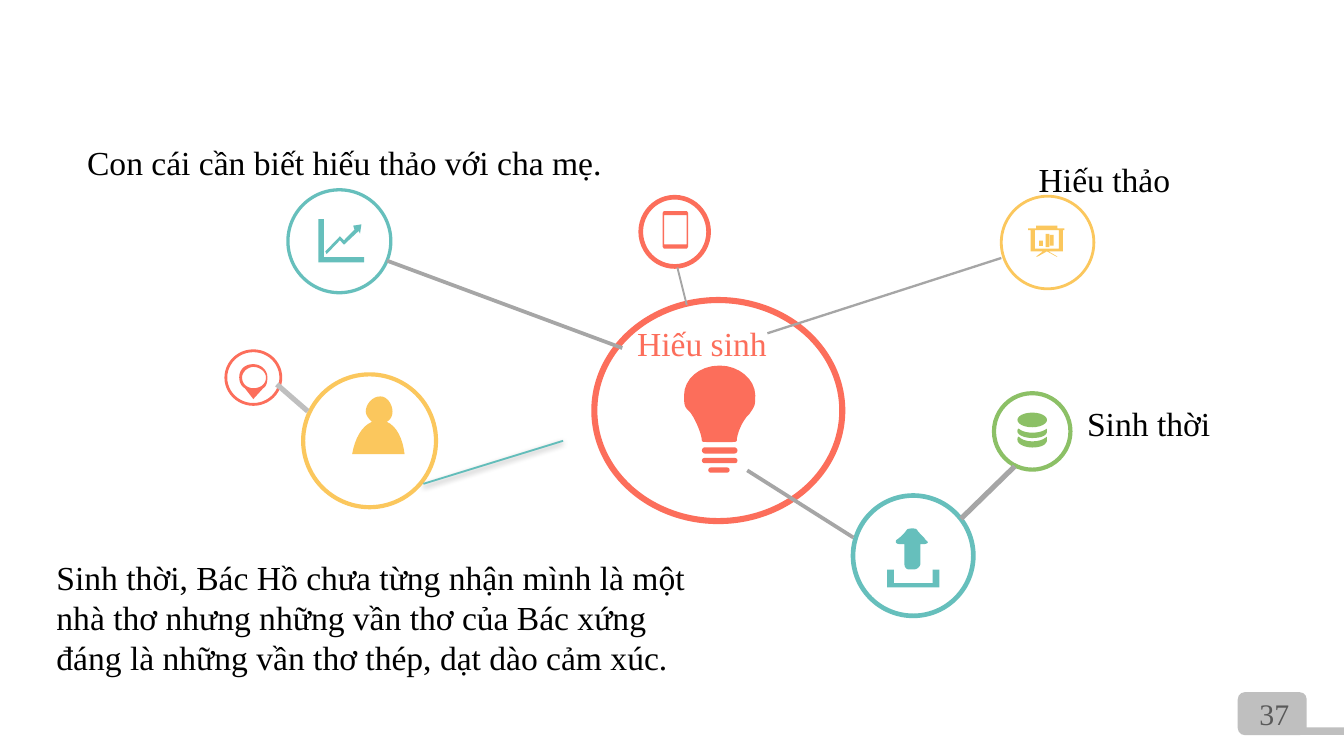
from lxml.etree import SubElement
from pptx import Presentation
from pptx.dml.color import RGBColor
from pptx.enum.shapes import MSO_CONNECTOR, MSO_SHAPE
from pptx.enum.text import MSO_ANCHOR, MSO_AUTO_SIZE, PP_ALIGN
from pptx.oxml.ns import qn
from pptx.util import Inches, Pt

SLIDE_WIDTH = Inches(10)
SLIDE_HEIGHT = SLIDE_WIDTH * 9 // 16
GRID = SLIDE_WIDTH // 100
COLORS = {
    "coral": "FC6E5B", "teal": "66BFBC", "amber": "FBC75D", "green": "8CC066",
    "spoke": "A6A6A6", "badge": "BFBFBF", "number": "595959", "text": "000000",
    "accent": "62BDBA",
}


def rgb(color):
    """Look up a named colour."""
    return RGBColor.from_string(COLORS[color])


def emu(box):
    """Turn grid columns and rows into slide lengths."""
    return [round(value * GRID) for value in box]


def share(box, part):
    """Return the box that takes the given percentages of another box."""
    left, top, width, height = box
    x, y, w, h = part
    return (left + width * x / 100, top + height * y / 100, width * w / 100, height * h / 100)


def add_block(slide, kind, box, color):
    """Add a plain filled preset shape."""
    block = slide.shapes.add_shape(kind, *emu(box))
    block.shadow.inherit = False
    block.fill.solid()
    block.fill.fore_color.rgb = rgb(color)
    block.line.fill.background()
    return block


def add_ring(slide, box, color, weight):
    """Add a hollow ellipse whose outer edge fills the box."""
    left, top, width, height = box
    inset = weight / 7.2
    edge = (left + inset / 2, top + inset / 2, width - inset, height - inset)
    ring = add_block(slide, MSO_SHAPE.OVAL, edge, color)
    ring.fill.background()
    ring.line.color.rgb = rgb(color)
    ring.line.width = Pt(weight)


def flatten(contour):
    """Expand points and cubic curves into a list of points."""
    points = [contour[0]]
    for segment in contour[1:]:
        if len(segment) == 2:
            points.append(segment)
            continue
        controls = list(zip([points[-1][0], *segment[::2]], [points[-1][1], *segment[1::2]]))
        for t in (step / 8 for step in range(1, 9)):
            weights = ((1 - t) ** 3, 3 * t * (1 - t) ** 2, 3 * t * t * (1 - t), t ** 3)
            points.append(tuple(sum(w * c[axis] for w, c in zip(weights, controls)) for axis in (0, 1)))
    return points


def add_outline(slide, box, color, *contours):
    """Fill contours given in percentages of the box; an inner one is a hole."""
    builder = None
    for contour in contours:
        points = [emu(share(box, (x, y, 0, 0))[:2]) for x, y in flatten(contour)]
        if builder is None:
            builder = slide.shapes.build_freeform(*points[0], scale=1.0)
        else:
            builder.move_to(*points[0])
        builder.add_line_segments(points[1:], close=True)
    outline = builder.convert_to_shape()
    outline.shadow.inherit = False
    outline.fill.solid()
    outline.fill.fore_color.rgb = rgb(color)
    outline.line.fill.background()


def add_spoke(slide, start, end, weight, color="spoke", shaded=False):
    """Join two grid points with a straight line."""
    spoke = slide.shapes.add_connector(MSO_CONNECTOR.STRAIGHT, *emu((*start, *end)))
    spoke.line.color.rgb = rgb(color)
    spoke.line.width = Pt(weight)
    effects = SubElement(spoke.element.spPr, qn("a:effectLst"))
    if shaded:
        shadow = SubElement(effects, qn("a:outerShdw"), blurRad="40000", dist="20000", dir="5400000", rotWithShape="0")
        SubElement(SubElement(shadow, qn("a:srgbClr"), val="000000"), qn("a:alpha"), val="38000")


def write(slide, text, box, holder=None, size=18, color="text", wrap=False, align=PP_ALIGN.LEFT, spacing=1.0):
    """Write formatted text in a placeholder or a new text box."""
    left, top, width, height = emu(box)
    holder = holder or slide.shapes.add_textbox(left, top, width, height)
    holder.left, holder.top, holder.width, holder.height = left, top, width, height
    frame = holder.text_frame
    frame.text = text
    frame.auto_size = MSO_AUTO_SIZE.NONE
    frame.word_wrap = wrap
    frame.vertical_anchor = MSO_ANCHOR.TOP
    paragraph = frame.paragraphs[0]
    properties = paragraph._p.get_or_add_pPr()
    properties.set("marL", "0")
    properties.set("indent", "0")
    SubElement(properties, qn("a:buNone"))
    paragraph.alignment = align
    paragraph.line_spacing = spacing
    paragraph.space_before = Pt(0)
    font = paragraph.runs[0].font
    font.name = "Times New Roman"
    font.size = Pt(size)
    font.color.rgb = rgb(color)


def draw_easel(slide, box, color):
    """Draw a presentation board with three bars."""
    board = [(100, 9), (81, 9), (81, 0), (22, 0), (22, 9), (0, 9), (0, 14), (7, 14), (7, 83), (41, 83),
             (22, 100), (26, 100), (52, 83), (78, 100), (81, 100), (56, 83), (96, 83), (96, 14), (100, 14)]
    add_outline(slide, box, color, board, [(19, 14), (85, 14), (85, 74), (19, 74)])
    for bar in ((30, 48, 11, 17), (48, 26, 11, 43), (59, 30, 11, 35)):
        add_block(slide, MSO_SHAPE.RECTANGLE, share(box, bar), color)


def draw_upload(slide, box, color):
    """Draw an arrow rising from a tray."""
    add_outline(slide, box, color, [(0, 70), (13, 70), (13, 93), (87, 93), (87, 70), (100, 70), (100, 100), (0, 100)])
    arrow = [(19, 39), (27, 39), (27, 84), (27, 94, 31, 100, 42, 100), (54, 100), (62, 100, 73, 94, 73, 84),
             (73, 39), (77, 39), (92, 39, 100, 35, 88, 29), (85, 23, 69, 13, 62, 3), (58, 0, 42, 0, 35, 3),
             (27, 13, 15, 23, 4, 29), (0, 35, 4, 39, 19, 39)]
    add_outline(slide, share(box, (15, 0, 67, 70)), color, arrow)


def draw_database(slide, box, color):
    """Draw a stack of three discs."""
    add_block(slide, MSO_SHAPE.OVAL, share(box, (0, 0, 100, 42)), color)
    band = [(50, 43), (32, 43, 14, 29, 5, 0), (0, 0, 0, 29, 0, 29), (0, 71, 27, 100, 50, 100),
            (82, 100, 100, 71, 100, 29), (100, 0), (86, 29, 73, 43, 50, 43)]
    for level in ((0, 46, 100, 27), (0, 69, 100, 31)):
        add_outline(slide, share(box, level), color, band)


def draw_pin(slide, box, color):
    """Draw a map pin."""
    pin = [(100, 38), (100, 15, 75, 0, 50, 0), (20, 0, 0, 15, 0, 38), (0, 54, 10, 65, 20, 69),
           (50, 100), (85, 69), (95, 65, 100, 54, 100, 38)]
    hole = [(50, 69), (30, 69, 10, 58, 10, 38), (10, 23, 30, 8, 50, 8), (75, 8, 95, 23, 95, 38), (95, 58, 75, 69, 50, 69)]
    add_outline(slide, box, color, pin, hole)


def draw_trend(slide, box, color):
    """Draw chart axes with a rising arrow."""
    add_outline(slide, box, color, [(0, 0), (12, 0), (12, 86), (100, 86), (100, 98), (0, 98)])
    add_outline(slide, box, color, [(47, 48), (56, 58), (88, 27), (91, 33), (94, 12), (76, 15),
                                    (79, 24), (56, 48), (47, 39), (15, 73), (18, 79)])


def draw_person(slide, box, color):
    """Draw a head and shoulders."""
    add_outline(slide, box, color, [(66, 44), (74, 40, 77, 33, 77, 26), (77, 14, 67, 0, 54, 0), (38, 0, 26, 14, 26, 26),
                                    (26, 33, 33, 40, 38, 44), (18, 51, 5, 74, 0, 100), (100, 100), (97, 74, 85, 51, 66, 44)])


def draw_tablet(slide, box, color):
    """Draw a tablet frame."""
    add_outline(slide, box, color, [(5, 0), (95, 0), (100, 5), (100, 95), (95, 100), (5, 100), (0, 95), (0, 5)],
                [(6, 11), (94, 11), (94, 89), (6, 89)])


def draw_bulb(slide, box, color):
    """Draw a light bulb."""
    glass = [(100, 39), (100, 18, 77, 0, 50, 0), (21, 0, 0, 18, 0, 39), (0, 44, 0, 51, 2, 54), (4, 58, 8, 60, 10, 63),
             (17, 72, 25, 91, 25, 98), (25, 100, 28, 100, 32, 100), (68, 100), (70, 100, 74, 100, 74, 98),
             (74, 91, 81, 72, 92, 63), (94, 60, 96, 58, 98, 54), (100, 51, 100, 44, 100, 39)]
    add_outline(slide, share(box, (0, 0, 100, 72)), color, glass)
    for thread in ((25, 77, 50, 6), (25, 87, 50, 5), (34, 96, 30, 5)):
        add_block(slide, MSO_SHAPE.ROUNDED_RECTANGLE, share(box, thread), color).adjustments[0] = 0.5


def draw_badge(slide, box):
    """Draw the page number badge."""
    add_block(slide, MSO_SHAPE.ROUNDED_RECTANGLE, share(box, (0, 0, 65, 100)), "badge")
    add_block(slide, MSO_SHAPE.RECTANGLE, share(box, (56, 82, 44, 18)), "badge")
    write(slide, "37", share(box, (8, -6, 61, 119)), size=16, color="number")


def draw_map(slide):
    """Draw the hub, its nodes and the spokes between them."""
    nodes = (
        (draw_bulb, (50.9, 27.2, 5.3, 7.9), (44, 22.1, 18.9, 16.9), "coral", 3.25),
        (draw_easel, (76.5, 16.8, 2.7, 2.3), (74.4, 14.5, 7.1, 7.1), "amber", 1.5),
        (draw_database, (75.7, 30.7, 2.2, 2.6), (73.8, 29.1, 6, 6), "green", 2.25),
        (draw_upload, (66, 39.3, 3.9, 4.4), (63.3, 36.7, 9.3, 9.3), "teal", 2.5),
        (draw_person, (26.2, 29.5, 3.9, 4.3), (22.4, 27.7, 10.2, 10.2), "amber", 2.25),
        (draw_pin, (17.8, 27.1, 2.1, 2.6), (16.7, 26, 4.3, 4.2), "coral", 1.5),
        (draw_trend, (23.7, 16.3, 3.4, 3.3), (21.3, 14, 7.9, 7.9), "teal", 1.75),
        (draw_tablet, (49.3, 15.7, 1.9, 2.8), (47.5, 14.5, 5.4, 5.5), "coral", 2.5),
    )
    for draw_icon, icon, ring, color, weight in nodes:
        draw_icon(slide, icon, color)
        add_ring(slide, ring, color, weight)
    add_spoke(slide, (50.4, 19.9), (51.1, 22.7), 1)
    add_spoke(slide, (57.1, 24.8), (74.5, 19.2), 1.25)
    add_spoke(slide, (55.6, 35), (63.5, 40), 2)
    add_spoke(slide, (71.5, 38.6), (75.5, 34.7), 2.75)
    add_spoke(slide, (31.5, 36), (41.9, 32.8), 1, "accent", True)
    add_spoke(slide, (20.6, 28.6), (22.9, 30.6), 2.75, "badge")
    add_spoke(slide, (28.8, 19.4), (46.3, 25.9), 2)


def main():
    """Build and save the slide."""
    deck = Presentation()
    deck.slide_width, deck.slide_height = SLIDE_WIDTH, SLIDE_HEIGHT
    slide = deck.slides.add_slide(deck.slide_layouts[1])
    draw_badge(slide, (92.1, 51.5, 7.9, 3.2))
    draw_map(slide)
    write(slide, "Hiếu sinh", (46.4, 23.5, 11.8, 4), slide.shapes.title, color="coral")
    write(slide, "Hiếu thảo", (76.3, 10.9, 11.9, 4.2), align=PP_ALIGN.JUSTIFY, spacing=1.15)
    write(slide, "Sinh thời", (79.9, 29.5, 11.3, 4))
    write(slide, "Con cái cần biết hiếu thảo với cha mẹ.", (5.5, 10.1, 40.7, 4))
    write(slide, "Sinh thời, Bác Hồ chưa từng nhận mình là một nhà thơ nhưng những vần thơ của Bác xứng "
          "đáng là những vần thơ thép, dạt dào cảm xúc.", (3.2, 40.9, 50, 10.1), slide.placeholders[1], wrap=True)
    deck.save("out.pptx")


if __name__ == "__main__":
    main()
